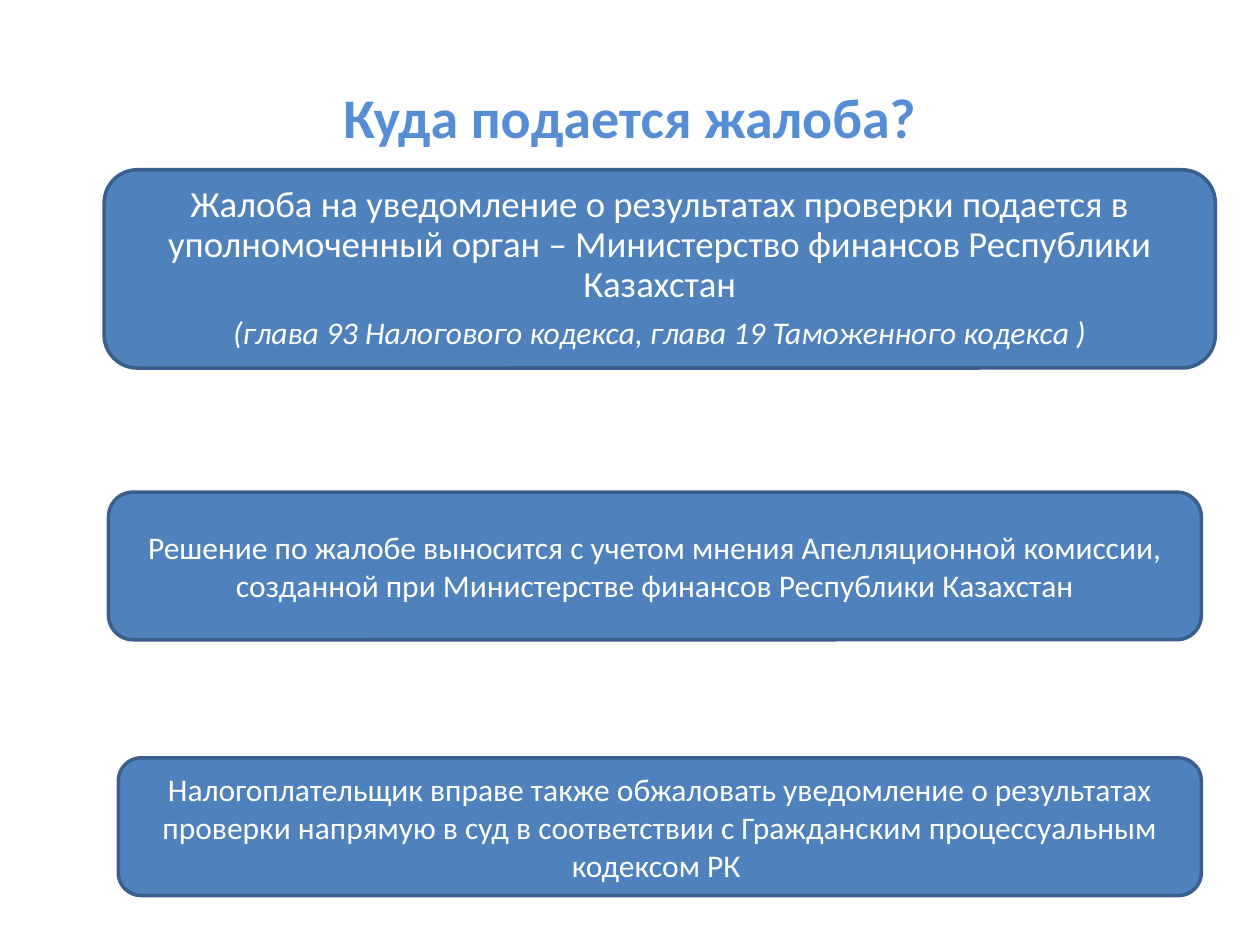
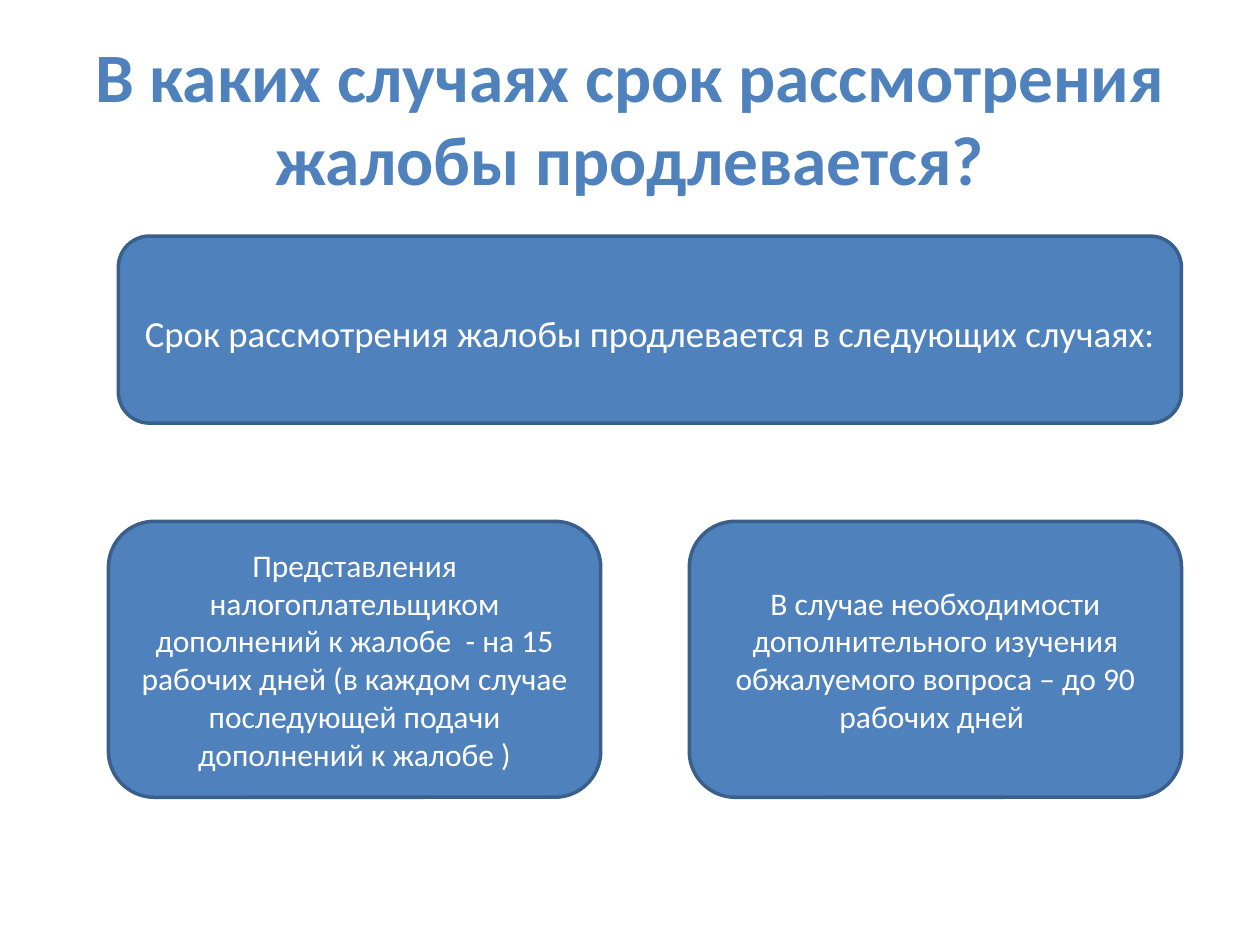
import pptx
import pptx.dml.color
import pptx.enum.shapes
import pptx.enum.text
import pptx.util

Pt = pptx.util.Pt
SHAPES = pptx.enum.shapes.MSO_SHAPE
ROUNDED = SHAPES.ROUNDED_RECTANGLE
ALTERNATE = SHAPES.FLOWCHART_ALTERNATE_PROCESS

FONT = "Calibri"
BLUE = "4F81BD"
LIGHT_BLUE = "558ED5"
DARK_BLUE = "3A5F8C"
WHITE = "FFFFFF"


def rgb(value):
    """Return the colour for a hex string."""
    return pptx.dml.color.RGBColor.from_string(value)


def add_text(tf, text, size=18, color=WHITE, bold=False, italic=False,
             line_spacing=None, before=0):
    """Write a centred paragraph, using the first one while it is empty."""
    p = tf.paragraphs[0] if not tf.text else tf.add_paragraph()
    p.alignment = pptx.enum.text.PP_ALIGN.CENTER
    p.line_spacing = line_spacing
    p.space_before = Pt(before)
    r = p.add_run()
    r.text = text
    r.font.name = FONT
    r.font.size = Pt(size)
    r.font.bold = bold
    r.font.italic = italic
    r.font.color.rgb = rgb(color)


def prepare_frame(sp):
    """Make the text of a shape wrap and sit in the middle."""
    tf = sp.text_frame
    tf.word_wrap = True
    tf.vertical_anchor = pptx.enum.text.MSO_ANCHOR.MIDDLE
    return tf


def add_slide(prs, title, size, color):
    """Add a blank slide with a bold title."""
    s = prs.slides.add_slide(prs.slide_layouts[6])
    sp = s.shapes.add_textbox(Pt(36), Pt(21.6), Pt(648), Pt(90))
    add_text(prepare_frame(sp), title, size=size, color=color, bold=True)
    return s


def add_box(s, kind, left, top, width, height):
    """Add a blue outlined box and return its text frame."""
    sp = s.shapes.add_shape(kind, Pt(left), Pt(top), Pt(width), Pt(height))
    sp.shadow.inherit = False
    sp.fill.solid()
    sp.fill.fore_color.rgb = rgb(BLUE)
    sp.line.color.rgb = rgb(DARK_BLUE)
    sp.line.width = Pt(2)
    return prepare_frame(sp)


def build_where_to_file(prs):
    """Build the slide on where a complaint is filed."""
    s = add_slide(prs, "Куда подается жалоба?", 32, LIGHT_BLUE)
    tf = add_box(s, ROUNDED, 59.5, 97, 635, 113.3)
    add_text(tf, "Жалоба на уведомление о результатах проверки подается в "
             "уполномоченный орган – Министерство финансов Республики "
             "Казахстан", size=21, line_spacing=0.9)
    add_text(tf, "(глава 93 Налогового кодекса, глава 19 Таможенного кодекса )",
             italic=True, line_spacing=0.9, before=7)
    add_text(add_box(s, ROUNDED, 62, 281.2, 624.5, 84.4),
             "Решение по жалобе выносится с учетом мнения Апелляционной "
             "комиссии, созданной при Министерстве финансов Республики "
             "Казахстан")
    add_text(add_box(s, ROUNDED, 67.6, 433.1, 618.9, 78.7),
             "Налогоплательщик вправе также обжаловать уведомление о "
             "результатах проверки напрямую в суд в соответствии с "
             "Гражданским процессуальным кодексом РК ")


def build_extension(prs):
    """Build the slide on when the review period is extended."""
    s = add_slide(prs, "В каких случаях срок рассмотрения жалобы продлевается?",
                  39.6, BLUE)
    tf = add_box(s, ALTERNATE, 67.6, 134.9, 607.5, 106.9)
    tf.margin_top = Pt(7.2)
    add_text(tf, "Срок рассмотрения жалобы продлевается в следующих случаях:",
             size=21)
    cases = [
        "Представления налогоплательщиком дополнений к жалобе  - на 15 "
        "рабочих дней (в каждом случае последующей подачи дополнений к "
        "жалобе )",
        "В случае необходимости дополнительного изучения обжалуемого "
        "вопроса – до 90 рабочих дней ",
    ]
    for i, case in enumerate(cases):
        add_text(add_box(s, ALTERNATE, 62 + 331.9 * i, 297.9, 281.3, 157.7), case)


def main():
    """Build and save the presentation."""
    prs = pptx.Presentation()
    prs.slide_width, prs.slide_height = Pt(720), Pt(540)
    build_where_to_file(prs)
    build_extension(prs)
    prs.save("out.pptx")


if __name__ == "__main__":
    main()
